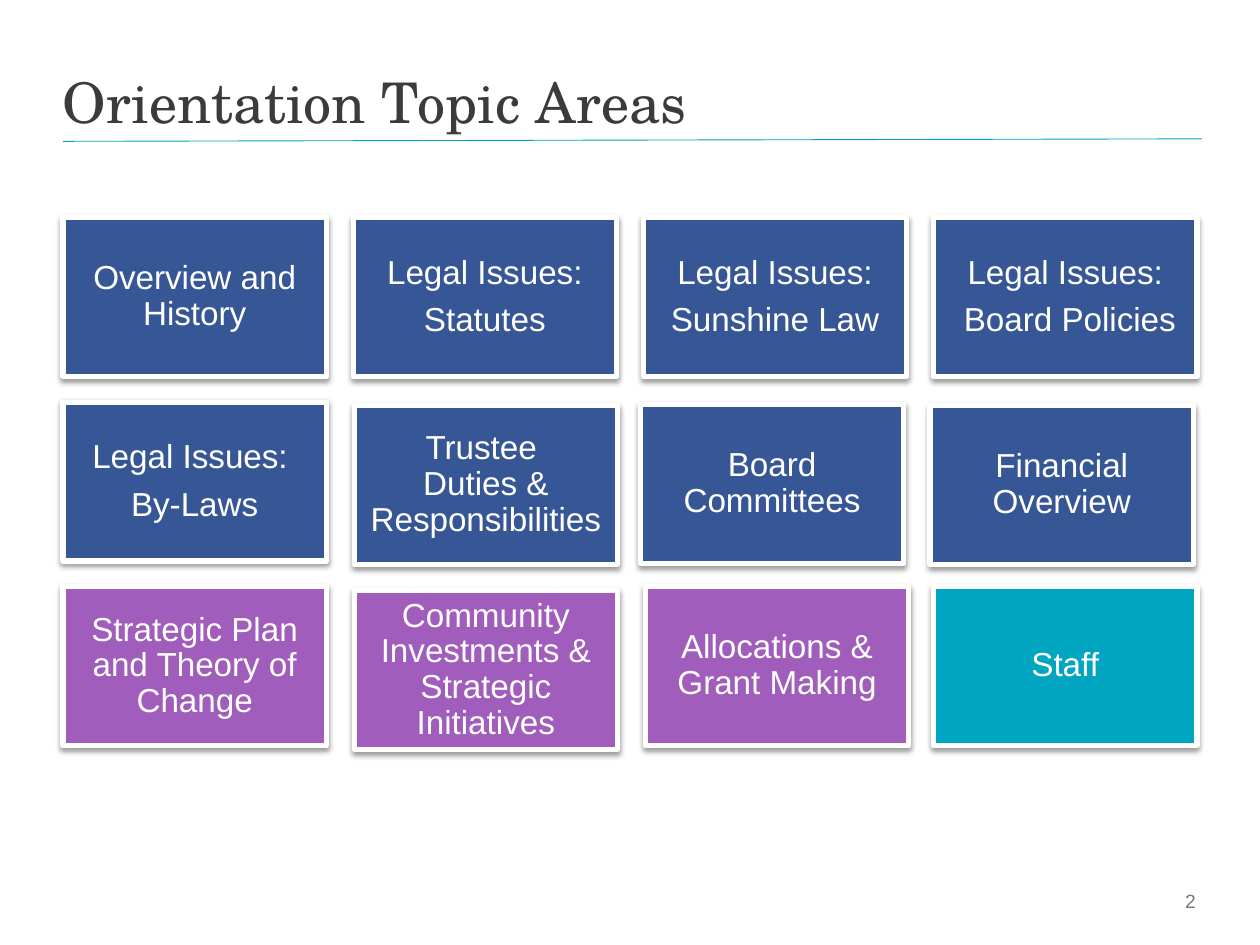
from dataclasses import dataclass

from lxml import etree
from pptx import Presentation
from pptx import util as u
from pptx.dml.color import RGBColor
from pptx.enum import shapes, text
from pptx.oxml import parse_xml
from pptx.oxml.ns import nsdecls, qn


@dataclass(frozen=True)
class Theme:
    blue: str = "365695"
    purple: str = "A05DBB"
    teal: str = "00A5C1"
    white: str = "FFFFFF"
    dark: str = "3B3B3B"
    grey: str = "777877"
    heading_font: str = "TeX Gyre Schola"
    body_font: str = "Arial"
    title_size: float = 32
    card_size: float = 19
    number_size: float = 11


THEME = Theme()
CARD_WIDTH, CARD_HEIGHT = 5.31, 3.2

# Each card: lines, fill, nudge from its grid cell in cm, gap after a line in pt
GAP = 6.65
CARD_ROWS = [
    [
        (["Overview and History"], THEME.blue, (0, 0), GAP),
        (["Legal Issues:", "Statutes"], THEME.blue, (0, 0), GAP),
        (["Legal Issues:", "Sunshine Law"], THEME.blue, (0, 0), GAP),
        (["Legal Issues:", " Board Policies"], THEME.blue, (0, 0), GAP),
    ],
    [
        (["Legal Issues: ", "By-Laws"], THEME.blue, (0, 0), GAP),
        (["Trustee ", "Duties & Responsibilities"], THEME.blue, (0.02, 0.07), 0),
        (["Board Committees"], THEME.blue, (-0.06, 0.05), GAP),
        (["Financial Overview"], THEME.blue, (-0.07, 0.07), GAP),
    ],
    [
        (["Strategic Plan and Theory of Change"], THEME.purple, (0, 0), GAP),
        (["Community Investments & Strategic Initiatives"], THEME.purple, (0.02, 0.08), GAP),
        (["Allocations & Grant Making"], THEME.purple, (0.04, 0), GAP),
        (["Staff"], THEME.teal, (0, 0), GAP),
    ],
]


def write(shape, lines, *, size, color, font=THEME.body_font, align=text.PP_ALIGN.LEFT,
          anchor=text.MSO_ANCHOR.MIDDLE, inset=0, spacing=None, after=0):
    """Fill a shape with one paragraph per line."""
    frame = shape.text_frame
    frame.word_wrap = True
    frame.vertical_anchor = anchor
    frame.margin_left = frame.margin_right = u.Cm(inset)
    frame.margin_top = frame.margin_bottom = u.Cm(inset)
    for index, line in enumerate(lines):
        para = frame.paragraphs[0] if index == 0 else frame.add_paragraph()
        para.alignment = align
        para.space_after = u.Pt(after)
        if spacing is not None:
            para.line_spacing = spacing
        span = para.add_run()
        span.text = line
        span.font.name = font
        span.font.size = u.Pt(size)
        span.font.color.rgb = RGBColor.from_string(color)


def add_soft_shadow(shape):
    """Cast a small blurred shadow straight down."""
    effects = parse_xml(
        f'<a:effectLst {nsdecls("a")}>'
        f'<a:outerShdw blurRad="{u.Pt(3.1)}" dist="{u.Pt(1.6)}" dir="5400000" rotWithShape="0">'
        '<a:srgbClr val="000000"><a:alpha val="38000"/></a:srgbClr>'
        '</a:outerShdw></a:effectLst>')
    shape.shadow.inherit = False
    properties = shape.element.spPr
    properties.replace(properties.find(qn("a:effectLst")), effects)


def add_header(page, left, top, width, height):
    """Title with a thin, slightly rising rule beneath it."""
    rule = page.shapes.add_connector(
        shapes.MSO_CONNECTOR.STRAIGHT, u.Cm(left), u.Cm(top + height + 0.13),
        u.Cm(left + width + 0.1), u.Cm(top + height + 0.08))
    rule.line.color.rgb = RGBColor.from_string(THEME.teal)
    rule.line.width = u.Pt(0.5)
    etree.SubElement(rule.element.spPr, qn("a:effectLst"))

    box = page.shapes.add_textbox(u.Cm(left), u.Cm(top), u.Cm(width), u.Cm(height))
    write(box, ["Orientation Topic Areas"], size=THEME.title_size, color=THEME.dark,
          font=THEME.heading_font, anchor=text.MSO_ANCHOR.BOTTOM, spacing=u.Pt(33))


def add_card(page, left, top, lines, fill, after):
    """Framed topic card."""
    card = page.shapes.add_shape(
        shapes.MSO_SHAPE.RECTANGLE, u.Cm(left), u.Cm(top),
        u.Cm(CARD_WIDTH), u.Cm(CARD_HEIGHT))
    card.fill.solid()
    card.fill.fore_color.rgb = RGBColor.from_string(fill)
    card.line.color.rgb = RGBColor.from_string(THEME.white)
    card.line.width = u.Pt(3)
    add_soft_shadow(card)
    write(card, lines, size=THEME.card_size, color=THEME.white,
          align=text.PP_ALIGN.CENTER, inset=0.2, spacing=0.9, after=after)


def add_topic_grid(page, left, top, width, height):
    """Cards spread evenly over the given area."""
    column_step = (width - CARD_WIDTH) / (len(CARD_ROWS[0]) - 1)
    row_step = (height - CARD_HEIGHT) / (len(CARD_ROWS) - 1)
    for row, cards in enumerate(CARD_ROWS):
        for column, (lines, fill, (shift_x, shift_y), after) in enumerate(cards):
            add_card(page, left + column * column_step + shift_x,
                     top + row * row_step + shift_y, lines, fill, after)


def add_page_number(page, left, top, width, height):
    """Number at the lower right."""
    box = page.shapes.add_textbox(u.Cm(left), u.Cm(top), u.Cm(width), u.Cm(height))
    write(box, ["2"], size=THEME.number_size, color=THEME.grey,
          align=text.PP_ALIGN.RIGHT, inset=0.25)


def main():
    deck = Presentation()
    deck.slide_width, deck.slide_height = u.Cm(25.4), u.Cm(19.05)
    page = deck.slides.add_slide(deck.slide_layouts[6])
    add_header(page, 1.27, 0.36, 22.86, 2.36)
    add_page_number(page, 18.44, 17.65, 5.92, 1.02)
    add_topic_grid(page, 1.27, 4.39, 22.86, 10.64)
    deck.save("out.pptx")


if __name__ == "__main__":
    main()
